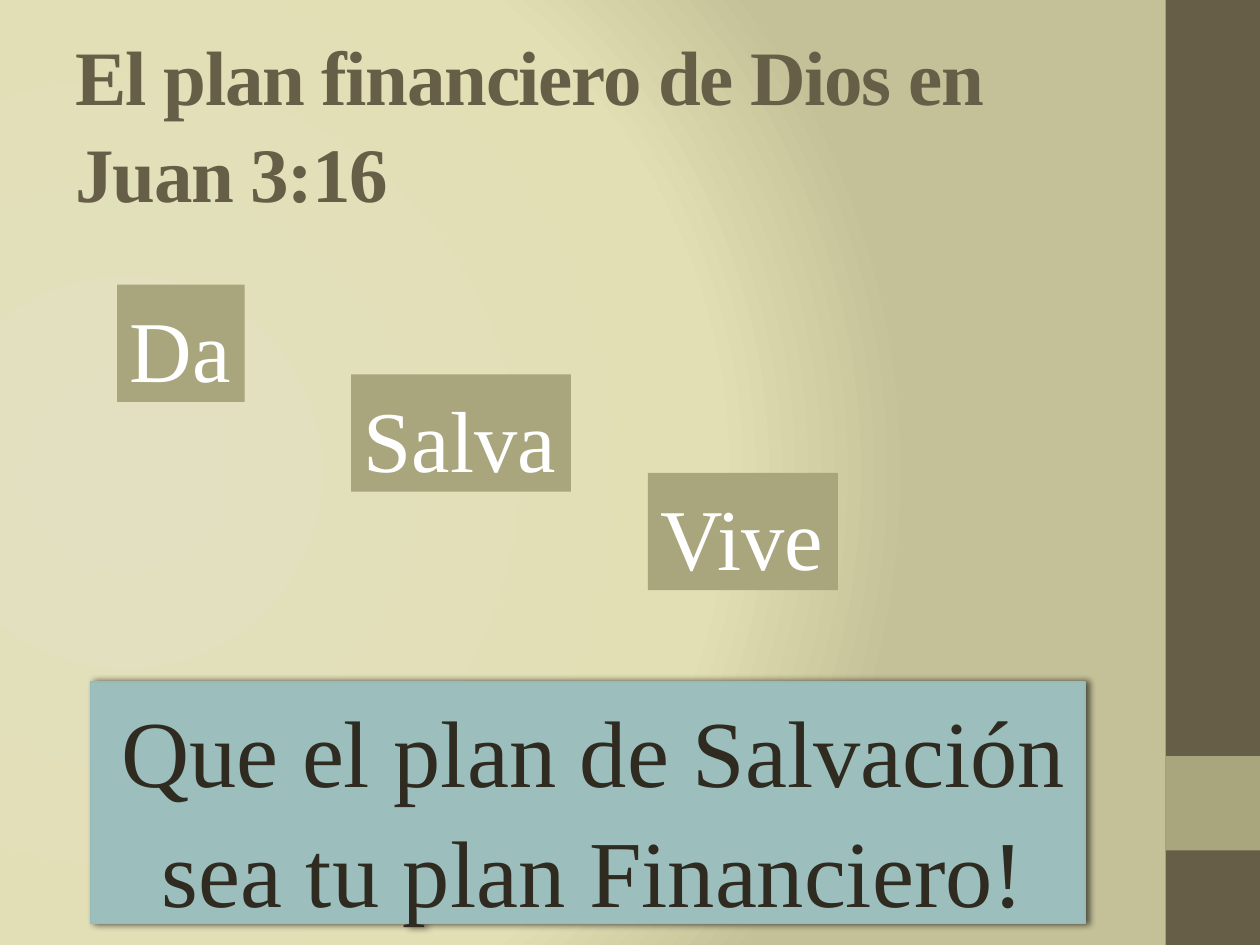
"""Build a slide on the financial plan of God in John 3:16."""
import pptx
import pptx.util
import pptx.dml.color
import pptx.enum.shapes
import pptx.enum.text
import pptx.oxml

Pt = pptx.util.Pt
Align = pptx.enum.text.PP_ALIGN
Anchor = pptx.enum.text.MSO_ANCHOR
Fit = pptx.enum.text.MSO_AUTO_SIZE
NS = 'xmlns:a="http://schemas.openxmlformats.org/drawingml/2006/main"'

TITLE = "El plan financiero de Dios en Juan 3:16"
CLAIM = "Que el plan de Salvación sea tu plan Financiero!"
BARS = [((666, 0, 54, 540), "675E47"), ((666, 432, 54, 54), "A9A57C")]
TILES = [
    ("Salva", (200.7, 214, 125.6, 67)),
    ("Vive", (370.2, 270.2, 108.6, 67)),
    ("Da", (67, 162.7, 72.8, 67)),
]
STOPS = [(0, "E2E0C0"), (75, "E2DFB4"), (100, "C4C198")]


def color(code):
    return pptx.dml.color.RGBColor.from_string(code)


def place(shape, box):
    for name, size in zip(("left", "top", "width", "height"), box):
        setattr(shape, name, Pt(size))


def block(slide, box, fill):
    kind = pptx.enum.shapes.MSO_SHAPE.RECTANGLE
    shape = slide.shapes.add_shape(kind, *map(Pt, box))
    shape.shadow.inherit = False
    shape.fill.solid()
    shape.fill.fore_color.rgb = color(fill)
    shape.line.fill.background()
    return shape


def write(shape, text, size, ink, frame, align=Align.LEFT, bold=False):
    body = shape.text_frame
    body.text = text
    for name, value in frame.items():
        setattr(body, name, value)
    para = body.paragraphs[0]
    para.alignment = align
    para.line_spacing = 1.05
    font = para.runs[0].font
    for name, value in dict(name="Times New Roman", size=Pt(size), bold=bold).items():
        setattr(font, name, value)
    font.color.rgb = color(ink)
    return para


def paint(slide):
    slide.background.fill.solid()
    stops = "".join(
        f'<a:gs pos="{at * 1000}"><a:srgbClr val="{code}"/></a:gs>' for at, code in STOPS
    )
    grad = pptx.oxml.parse_xml(
        f'<a:gradFill {NS} rotWithShape="1"><a:gsLst>{stops}</a:gsLst><a:path path="circle">'
        '<a:fillToRect l="20000" t="50000" r="100000" b="50000"/></a:path></a:gradFill>'
    )
    props = slide.element.cSld.bg.bgPr
    props.replace(props[0], grad)


def shade(shape):
    props = shape.element.spPr
    effect = props.find(pptx.oxml.ns.qn("a:effectLst"))
    effect.append(pptx.oxml.parse_xml(
        f'<a:outerShdw {NS} blurRad="{Pt(4)}" dist="{Pt(2)}" dir="0" rotWithShape="0">'
        '<a:srgbClr val="000000"><a:alpha val="60000"/></a:srgbClr></a:outerShdw>'
    ))


def main():
    deck = pptx.Presentation()
    deck.slide_width, deck.slide_height = Pt(720), Pt(540)
    slide = deck.slides.add_slide(deck.slide_layouts[5])
    paint(slide)
    for box, fill in BARS:
        block(slide, box, fill)

    title = slide.shapes.title
    place(title, (36, 43.2, 600, 90))
    frame = dict(auto_size=Fit.NONE, word_wrap=True, vertical_anchor=Anchor.MIDDLE,
                 margin_bottom=Pt(42))
    para = write(title, TITLE, 44, "675E47", frame, bold=True)
    para.runs[0].font._element.set("spc", "-80")

    claim = block(slide, (51.8, 389.5, 568.1, 138.2), "9CBEBD")
    claim.line.color.rgb = color("98BBBA")
    claim.line.width = Pt(1)
    shade(claim)
    frame = dict(auto_size=Fit.SHAPE_TO_FIT_TEXT, word_wrap=True, vertical_anchor=Anchor.TOP)
    para = write(claim, CLAIM, 54, "2F2B20", frame, Align.CENTER)
    props = para._p.get_or_add_pPr()
    props.set("marL", str(Pt(6.5)))
    props.set("indent", "0")

    for text, box in TILES:
        tile = block(slide, box, "A9A57C")
        write(tile, text, 49.5, "FFFFFF", dict(frame, word_wrap=False))
    deck.save("out.pptx")


if __name__ == "__main__":
    main()
